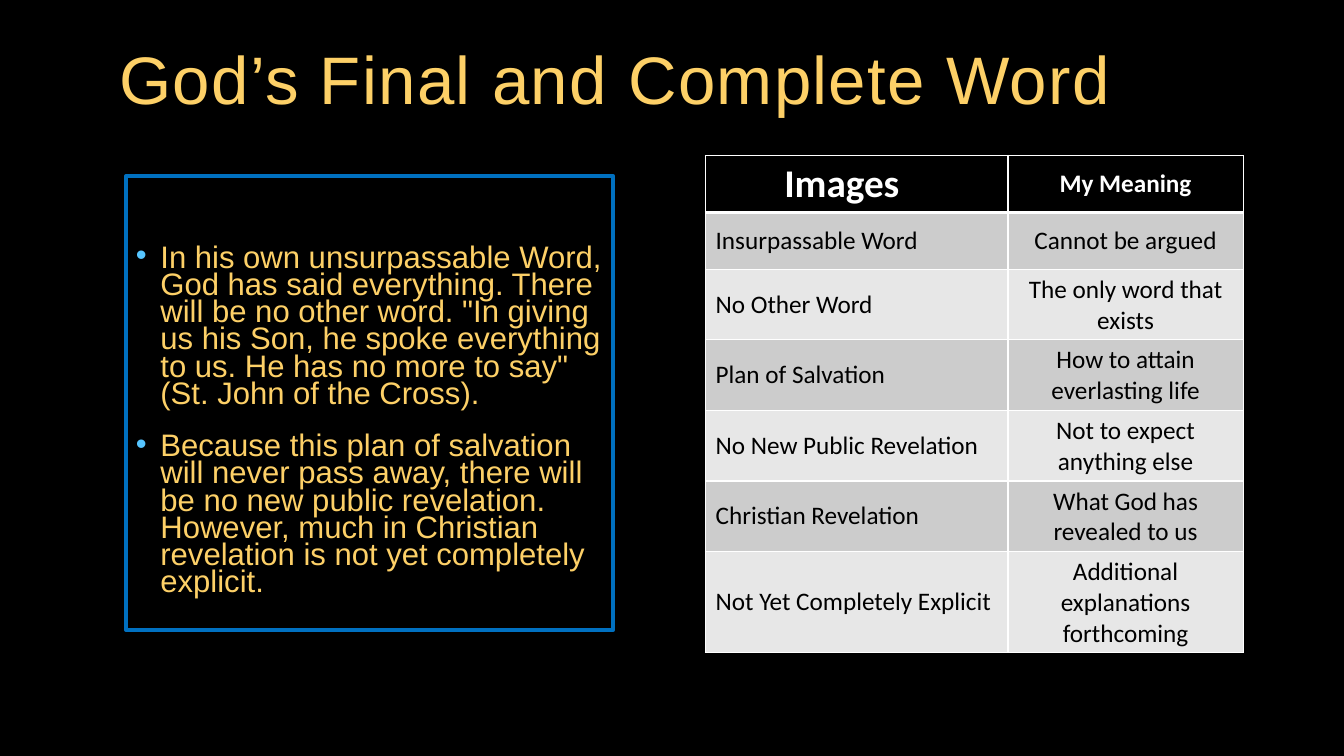
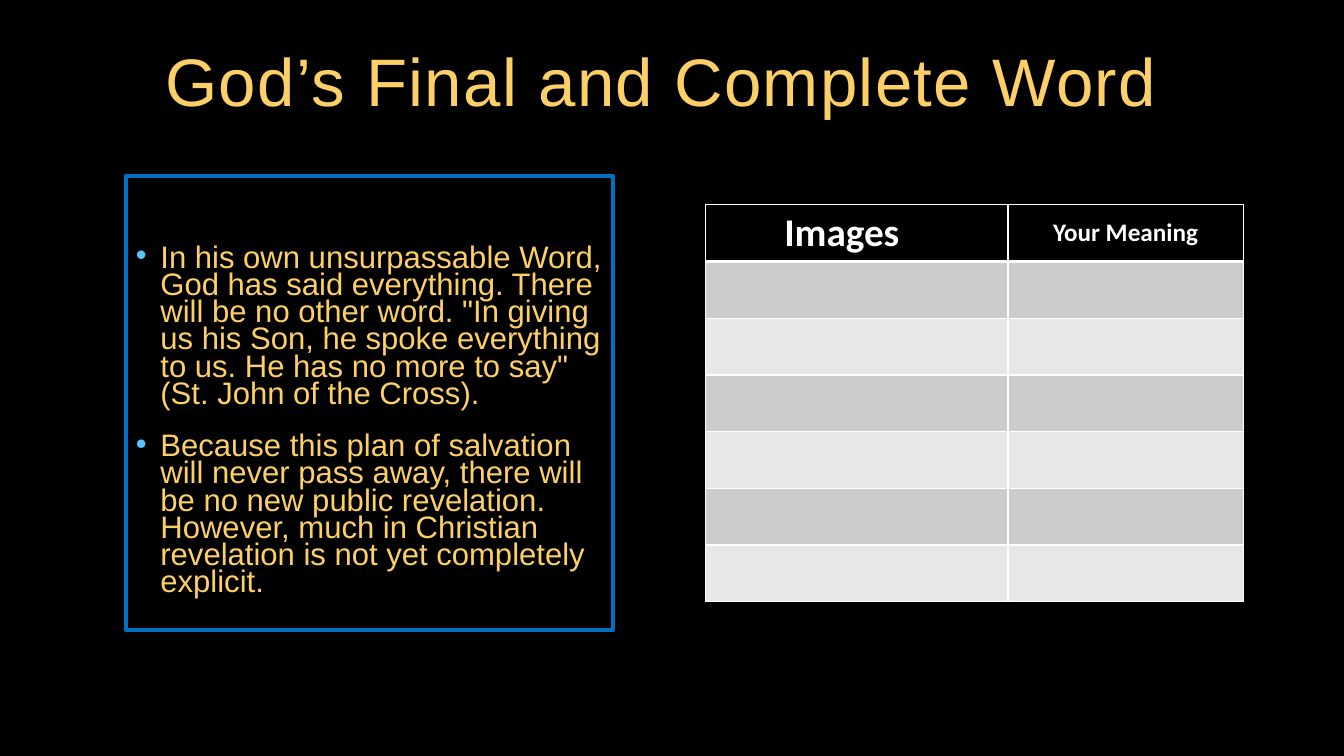
from dataclasses import dataclass

from lxml import etree
from pptx import Presentation
from pptx.dml.color import RGBColor as Color
from pptx.enum.text import MSO_ANCHOR as Anchor, PP_ALIGN as Align
from pptx.oxml.ns import qn
from pptx.util import Pt


@dataclass(frozen=True)
class Theme:
    # Colours
    black: str = "000000"
    white: str = "FFFFFF"
    gold: str = "FDD067"
    blue: str = "0070C0"
    bullet: str = "56C5FF"
    bands: tuple = ("CCCCCC", "E7E7E7")
    # Fonts and sizes
    text_font: str = "Arial"
    table_font: str = "Calibri"
    title_size: float = 48
    body_size: float = 22.2
    heading_size: float = 28
    cell_size: float = 18


TITLE = "God’s Final and Complete Word"
PASSAGES = [
    "In his own unsurpassable Word, God has said everything. There will be "
    "no other word. \"In giving us his Son, he spoke everything to us. He has "
    "no more to say\" (St. John of the Cross).",
    "Because this plan of salvation will never pass away, there will be no new "
    "public revelation. However, much in Christian revelation is not yet "
    "completely explicit.",
]
MEANINGS = [
    ("Insurpassable Word", "Cannot be argued"),
    ("No Other Word", "The only word that exists"),
    ("Plan of Salvation", "How to attain everlasting life"),
    ("No New Public Revelation", "Not to expect anything else"),
    ("Christian Revelation", "What God has revealed to us"),
    ("Not Yet Completely Explicit", "Additional explanations forthcoming"),
]
BLANKS = [("", "")] * len(MEANINGS)


class Lesson:
    def __init__(self, theme):
        self.theme = theme
        self.deck = Presentation()
        self.deck.slide_width, self.deck.slide_height = Pt(960), Pt(540)
        fill = self.deck.slide_master.background.fill
        fill.solid()
        fill.fore_color.rgb = Color.from_string(theme.black)
        self.page = None

    def new_page(self):
        self.page = self.deck.slides.add_slide(self.deck.slide_layouts[6])

    def text_box(self, left, top, width, height):
        box = self.page.shapes.add_textbox(Pt(left), Pt(top), Pt(width), Pt(height))
        box.text_frame.word_wrap = True
        return box

    def set_font(self, para, name, size, color, bold=False):
        font = para.font
        font.name, font.size, font.bold = name, Pt(size), bold
        font.color.rgb = Color.from_string(color)

    # Title
    def title(self, text, left, top):
        frame = self.text_box(left, top, 774, 48).text_frame
        frame.vertical_anchor = Anchor.BOTTOM
        para = frame.paragraphs[0]
        span = para.add_run()
        span.text = text
        span._r.get_or_add_rPr().set("spc", "100")
        para.line_spacing = 0.9
        self.set_font(para, self.theme.text_font, self.theme.title_size, self.theme.gold)

    # Framed passage with bullets
    def passage(self, texts):
        box = self.text_box(90, 126, 348, 324)
        box.line.color.rgb = Color.from_string(self.theme.blue)
        box.line.width = Pt(3)
        frame = box.text_frame
        frame.margin_top, frame.margin_right = Pt(50), Pt(6)
        for index, text in enumerate(texts):
            para = frame.add_paragraph() if index else frame.paragraphs[0]
            para.text = text
            self.bullet(para, 17.5)
            para.line_spacing = 0.73
            para.space_before = Pt(18 if index else 0)
            self.set_font(para, self.theme.text_font, self.theme.body_size, self.theme.gold)

    def bullet(self, para, indent):
        props = para._p.get_or_add_pPr()
        props.set("marL", str(Pt(indent)))
        props.set("indent", str(-Pt(indent)))
        color = etree.SubElement(props, qn("a:buClr"))
        etree.SubElement(color, qn("a:srgbClr"), val=self.theme.bullet)
        etree.SubElement(props, qn("a:buFont"), typeface=self.theme.text_font)
        etree.SubElement(props, qn("a:buChar"), char="•")

    # Table of images and meanings
    def meaning_table(self, top, heading, rows):
        theme, row_height = self.theme, 40.5
        rows = [("Images", heading), *rows]
        frame = self.page.shapes.add_table(
            len(rows), 2, Pt(504), Pt(top), Pt(384), Pt(row_height * len(rows)))
        table = frame.table
        table.horz_banding = False
        for column, width in zip(table.columns, (216, 168)):
            column.width = Pt(width)
        for r, texts in enumerate(rows):
            table.rows[r].height = Pt(row_height)
            for c, text in enumerate(texts):
                cell = table.cell(r, c)
                self.borders(cell, top=3 if r == 1 else 1, bottom=1 if r else 3)
                cell.fill.solid()
                cell.fill.fore_color.rgb = Color.from_string(
                    theme.bands[(r - 1) % 2] if r else theme.black)
                cell.vertical_anchor = Anchor.MIDDLE
                para = cell.text_frame.paragraphs[0]
                para.text = text
                para.alignment = Align.CENTER if c else Align.LEFT
                is_main = r == 0 and c == 0
                if is_main:
                    para._p.get_or_add_pPr().set("marL", str(Pt(49)))
                self.set_font(para, theme.table_font,
                              theme.heading_size if is_main else theme.cell_size,
                              theme.black if r else theme.white, bold=r == 0)

    def borders(self, cell, top, bottom):
        props = cell._tc.get_or_add_tcPr()
        for side, width in (("L", 1), ("R", 1), ("T", top), ("B", bottom)):
            line = etree.SubElement(props, qn(f"a:ln{side}"), w=str(Pt(width)))
            fill = etree.SubElement(line, qn("a:solidFill"))
            etree.SubElement(fill, qn("a:srgbClr"), val=self.theme.white)


def main():
    lesson = Lesson(Theme())
    pages = [
        ((78, 40.5), 111, "My Meaning", MEANINGS),
        ((111, 42), 146, "Your Meaning", BLANKS),
    ]
    for title_at, table_top, heading, rows in pages:
        lesson.new_page()
        lesson.title(TITLE, *title_at)
        lesson.passage(PASSAGES)
        lesson.meaning_table(table_top, heading, rows)
    lesson.deck.save("out.pptx")


if __name__ == "__main__":
    main()
